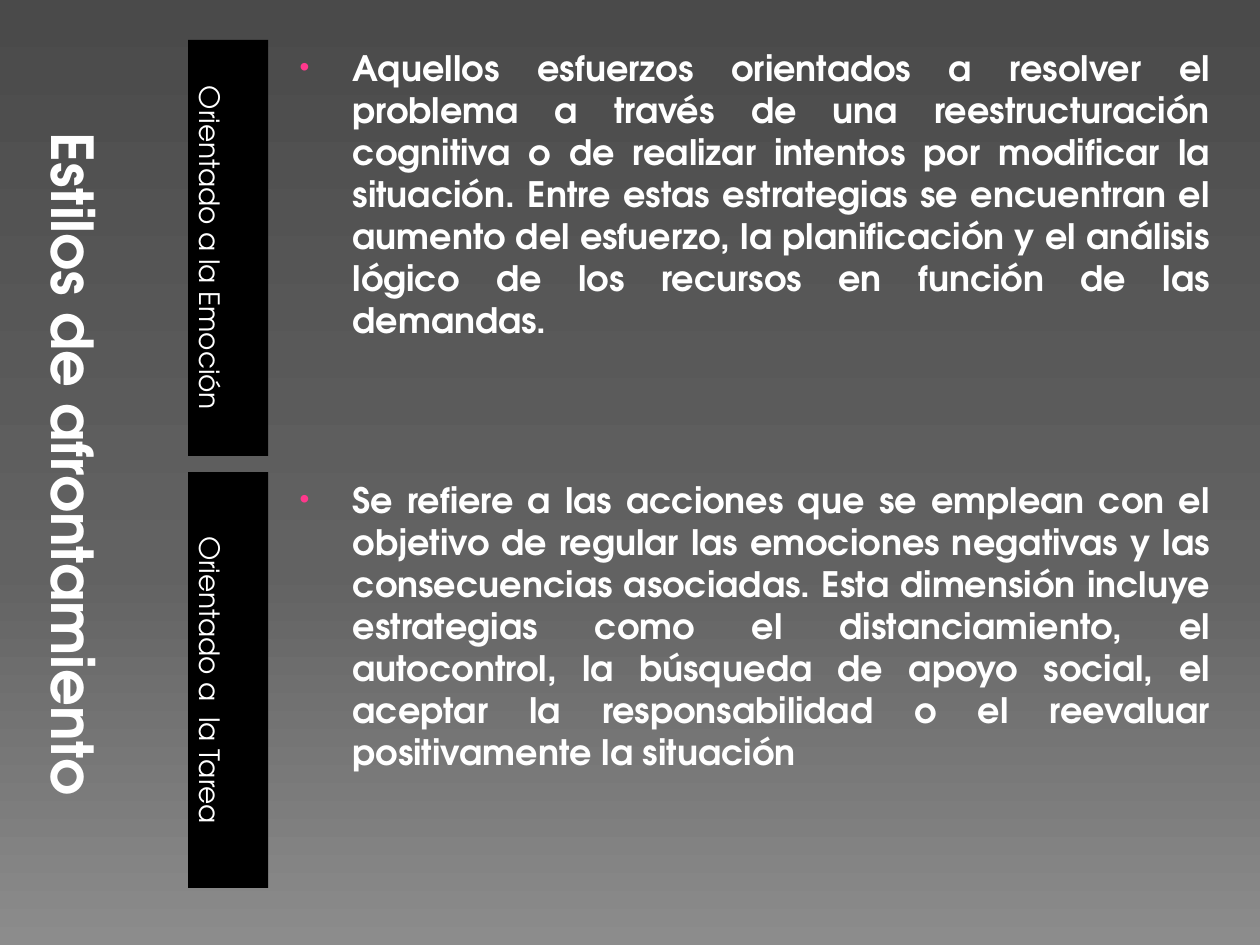
from copy import deepcopy

from lxml import etree
from pptx import Presentation
from pptx.dml.color import RGBColor
from pptx.enum.text import MSO_ANCHOR, MSO_AUTO_SIZE, PP_ALIGN
from pptx.oxml.ns import qn
from pptx.util import Emu, Pt

TOP, LOW = MSO_ANCHOR.TOP, MSO_ANCHOR.BOTTOM
MID, FULL = PP_ALIGN.CENTER, PP_ALIGN.JUSTIFY
NO_FIT = MSO_AUTO_SIZE.NONE
FONT = "TeX Gyre Adventor"
COLORS = {"text": "FFFFFF", "label": "000000", "bullet": "FF388C"}
SHADES = [(0, "4A4A4A"), (0.6, "626262"), (1, "8C8C8C")]
STYLES = [
    ("Orientado a la Emoción",
     "Aquellos esfuerzos orientados a resolver el problema a través de una "
     "reestructuración cognitiva o de realizar intentos por modificar la "
     "situación. Entre estas estrategias se encuentran el aumento del "
     "esfuerzo, la planificación y el análisis lógico de los recursos en "
     "función de las demandas."),
    ("Orientado a  la Tarea",
     "Se refiere a las acciones que se emplean con el objetivo de regular "
     "las emociones negativas y las consecuencias asociadas. Esta dimensión "
     "incluye estrategias como el distanciamiento, el autocontrol, la "
     "búsqueda de apoyo social, el aceptar la responsabilidad o el reevaluar "
     "positivamente la situación"),
]


def px(n):
    """Turn pixels into EMU."""
    return Emu(round(n * 914400 / 126))


def shade(slide):
    """Give the slide its vertical gradient."""
    fill = slide.background.fill
    fill.gradient()
    fill.gradient_angle = 270
    stops = slide.element.find(".//" + qn("a:gsLst"))
    stops.append(deepcopy(stops[0]))
    for stop, (place, color) in zip(fill.gradient_stops, SHADES):
        stop.position = place
        stop.color.rgb = RGBColor.from_string(color)


def dot(para):
    """Add a coloured bullet with a hanging indent."""
    props = para._p.get_or_add_pPr()
    props.set("marL", str(px(62)))
    props.set("indent", str(px(-53)))
    color = etree.SubElement(props, qn("a:buClr"))
    etree.SubElement(color, qn("a:srgbClr"), val=COLORS["bullet"])
    etree.SubElement(props, qn("a:buSzPct"), val="80000")
    etree.SubElement(props, qn("a:buFont"), typeface="Arial")
    etree.SubElement(props, qn("a:buChar"), char="•")


def write(shape, box, text, size, bold, align, anchor):
    """Place a placeholder and set its text."""
    shape.left, shape.top, shape.width, shape.height = map(px, box)
    frame = shape.text_frame
    frame.text = text
    frame.word_wrap = True
    frame.auto_size = NO_FIT
    frame.vertical_anchor = anchor
    para = frame.paragraphs[0]
    para.alignment = align
    para.space_before = Pt(0)
    if align == FULL:
        dot(para)
    font = para.font
    font.name, font.size, font.bold = FONT, Pt(size), bold
    font.color.rgb = RGBColor.from_string(COLORS["text"])


def turn(shape, box, text, size, bold):
    """Fill an upright box with text that reads downwards."""
    left, top, wide, high = box
    shift = (wide - high) / 2
    write(shape, (left + shift, top - shift, high, wide), text,
          size, bold, MID, LOW)
    shape.rotation = 90


def label(shape, top, text):
    """Draw a dark upright label."""
    turn(shape, (188, top, 80, 416), text, 16, False)
    shape.fill.solid()
    shape.fill.fore_color.rgb = RGBColor.from_string(COLORS["label"])


def main():
    """Build and save the slide."""
    deck = Presentation()
    deck.slide_width, deck.slide_height = px(1260), px(945)
    slide = deck.slides.add_slide(deck.slide_layouts[4])
    shade(slide)
    title, *parts = slide.placeholders
    turn(title, (34, 40, 147, 848), "Estilos de afrontamiento", 33, True)
    for i, (name, text) in enumerate(STYLES):
        top = 40 + 432 * i
        label(parts[2 * i], top, name)
        write(parts[2 * i + 1], (278, top, 945, 416), text,
              20, True, FULL, TOP)
    deck.save("out.pptx")


if __name__ == "__main__":
    main()
